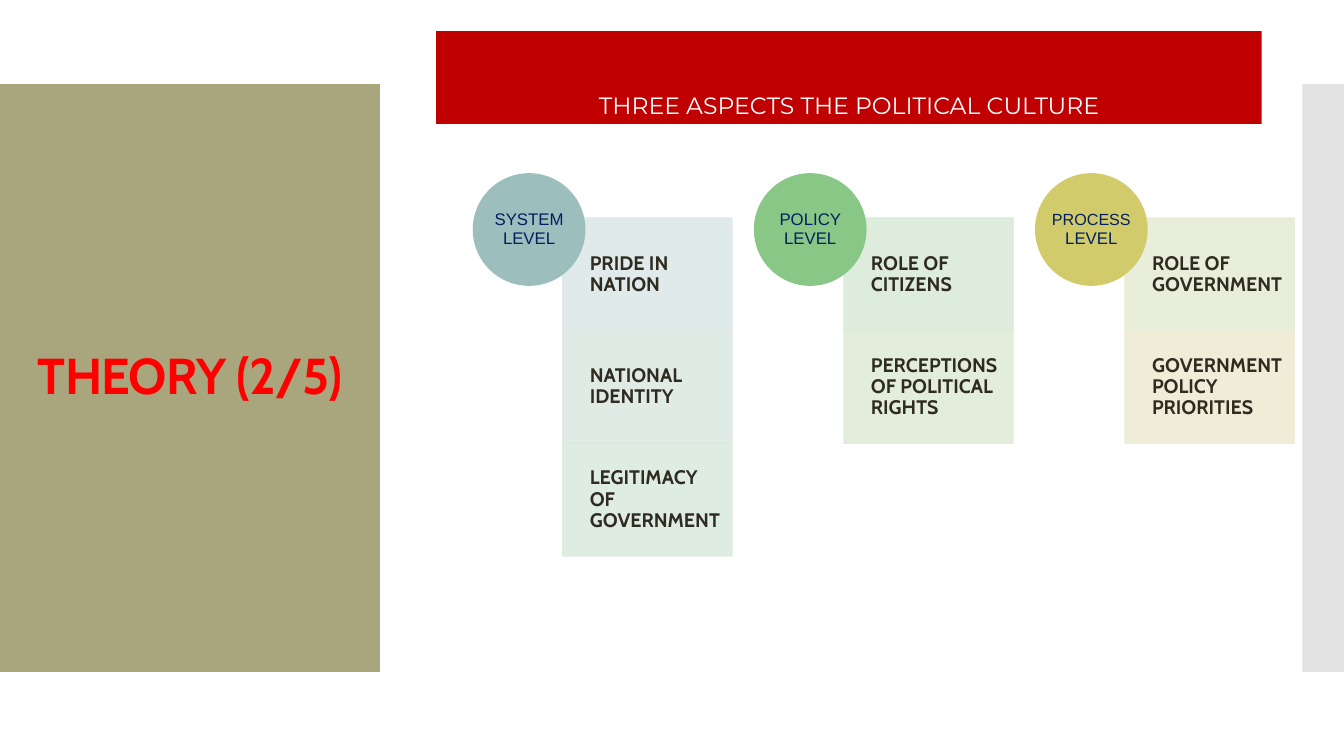
from pptx import Presentation
from pptx.dml.color import RGBColor
from pptx.enum import shapes as sh, text as tx
from pptx.oxml.ns import qn
from pptx.util import Pt
from lxml import etree

RECT, OVAL = sh.MSO_SHAPE.RECTANGLE, sh.MSO_SHAPE.OVAL
LEFT, MID = tx.PP_ALIGN.LEFT, tx.PP_ALIGN.CENTER

LEVELS = [
    ([("SYSTEM LEVEL", 12)], "9CBEBD",
     [("PRIDE IN NATION", "DEE8E8"), ("NATIONAL IDENTITY", "DDE9E4"),
      ("LEGITIMACY OF GOVERNMENT", "DBEADF")]),
    ([("POLICY LEVEL", 12)], "88C785",
     [("ROLE OF CITIZENS", "DAEBD9"),
      ("PERCEPTIONS OF POLITICAL RIGHTS", "E0ECD8")]),
    ([("PROCESS", 11.5), (" LEVEL", 12)], "D2CB6C",
     [("ROLE OF GOVERNMENT", "E7EDD6"),
      ("GOVERNMENT POLICY PRIORITIES", "EEECD4")]),
]


def color(code):
    """Turn a hex string into a colour."""
    return RGBColor.from_string(code)


def block(slide, kind, box, fill, alpha=100, edge=False):
    """Draw a filled shape, optionally see-through and outlined in its fill."""
    item = slide.shapes.add_shape(kind, *map(Pt, box))
    item.shadow.inherit = False
    item.fill.solid()
    item.fill.fore_color.rgb = color(fill)
    if edge:
        item.line.color.rgb = color(fill)
        item.line.width = Pt(0.75)
    else:
        item.line.fill.background()
    if alpha < 100:
        for tint in item.element.iter(qn("a:srgbClr")):
            etree.SubElement(tint, qn("a:alpha"), val=str(alpha * 1000))
    return item


def write(slide, box, words, font="Cabin", size=14, ink="2F2B20", bold=False,
          align=LEFT, anchor=tx.MSO_ANCHOR.MIDDLE, gap=0.9,
          pads=(0, 0, 0, 0), track=0):
    """Place text, given as a string or as (string, size) runs."""
    item = slide.shapes.add_textbox(*map(Pt, box))
    frame = item.text_frame
    frame.word_wrap = True
    frame.vertical_anchor = anchor
    (frame.margin_left, frame.margin_top,
     frame.margin_right, frame.margin_bottom) = map(Pt, pads)
    para = frame.paragraphs[0]
    para.alignment, para.line_spacing = align, gap
    for part, pt in [(words, size)] if isinstance(words, str) else words:
        run = para.add_run()
        run.text = part
        run.font.name, run.font.size, run.font.bold = font, Pt(pt), bold
        run.font.color.rgb = color(ink)
    if track:
        for prop in item.element.iter(qn("a:rPr")):
            prop.set("spc", str(int(track * 100)))


def panel(slide, box):
    """Draw the side panel with the slide title."""
    x, y, w, h = box
    block(slide, RECT, box, "A9A57C")
    write(slide, (x + 20, y + 28.8, w - 39.6, h - 57.6), "THEORY (2/5)", size=36,
          ink="FF0000", bold=True, pads=(7.2, 3.6, 7.2, 3.6), track=-0.6)


def banner(slide, box):
    """Draw the heading band."""
    block(slide, RECT, box, "C00000")
    write(slide, box, "THREE ASPECTS THE POLITICAL CULTURE", font="Montserrat",
          size=16.8, ink="FFFFFF", align=MID, anchor=tx.MSO_ANCHOR.BOTTOM,
          gap=2.8, pads=(0, 3.6, 0, 3.6))


def column(slide, box, name, fill, cells):
    """Draw one level: stacked cells with a disc over their corner."""
    x, y, w, side = box
    wide, inset = 121, 19.4
    left = x + w - wide
    for i, (words, tint) in enumerate(cells):
        top = y + 32 + i * side
        block(slide, RECT, (left, top, wide, side), tint, 90, True)
        write(slide, (left + inset, top, wide - inset, side), words,
              bold=True, pads=(0, 7.5, 7.5, 7.5))
    block(slide, OVAL, (x, y, side, side), fill)
    rim = 11.8
    write(slide, (x + rim, y + rim, side - 2 * rim, side - 2 * rim), name,
          font="Arial", ink="002060", align=MID)


def main():
    """Build and save the slide."""
    deck = Presentation()
    deck.slide_width, deck.slide_height = Pt(960), Pt(540)
    slide = deck.slides.add_slide(deck.slide_layouts[6])
    panel(slide, (0, 60, 271.4, 420))
    block(slide, RECT, (930.2, 60, 29.8, 420), "C8C8C8", 50)
    banner(slide, (311.6, 22.2, 589.6, 66.4))
    for i, level in enumerate(LEVELS):
        column(slide, (337.7 + i * 200.8, 123.7, 185.2, 80.5), *level)
    deck.save("out.pptx")


if __name__ == "__main__":
    main()
